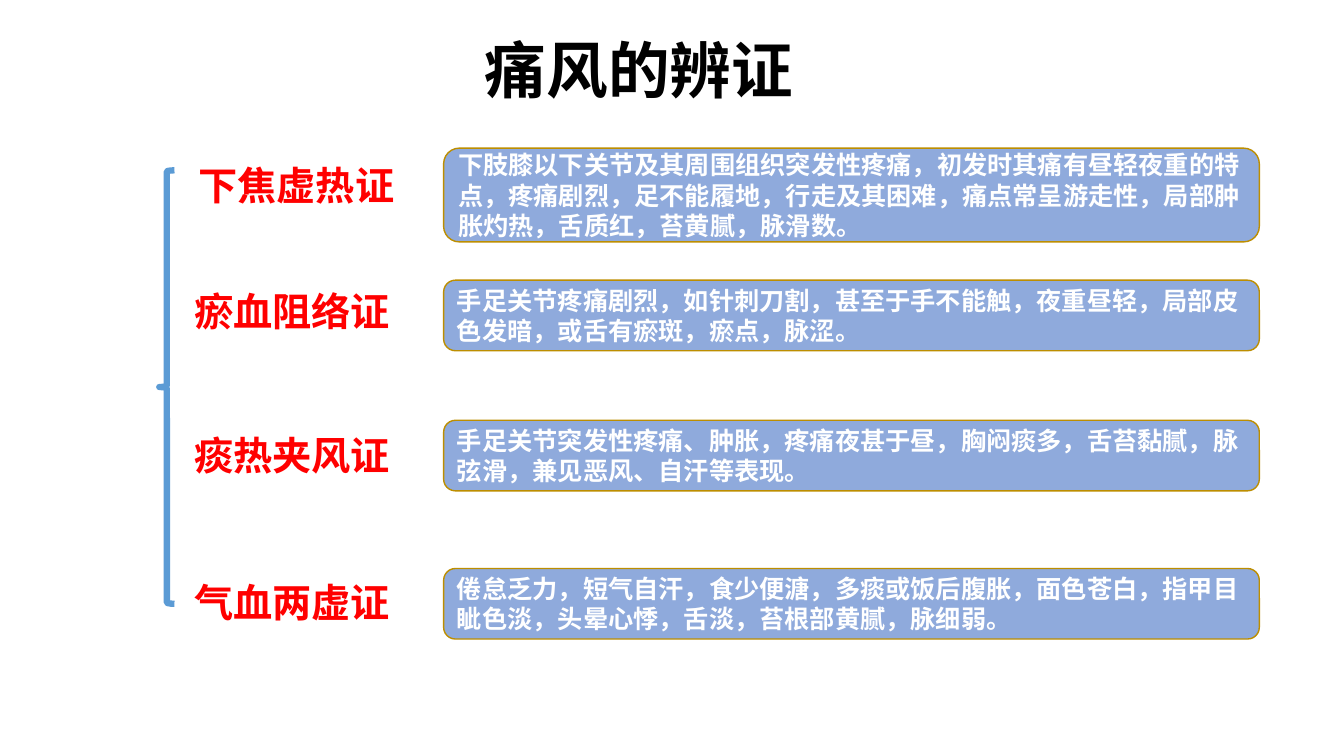
from lxml import etree
from pptx import Presentation
from pptx.dml.color import RGBColor
from pptx.enum.shapes import MSO_SHAPE
from pptx.enum.text import MSO_ANCHOR, PP_ALIGN
from pptx.oxml.ns import qn
from pptx.util import Inches, Pt

ROUND = MSO_SHAPE.ROUNDED_RECTANGLE
BRACE = MSO_SHAPE.LEFT_BRACE
MIDDLE = MSO_ANCHOR.MIDDLE
LEFT = PP_ALIGN.LEFT

BLACK = RGBColor(0x00, 0x00, 0x00)
WHITE = RGBColor(0xFF, 0xFF, 0xFF)
RED = RGBColor(0xFF, 0x00, 0x00)
BLUE = RGBColor(0x5B, 0x9B, 0xD5)
PALE = RGBColor(0x8F, 0xAA, 0xDC)
GOLD = RGBColor(0xBD, 0x8E, 0x00)

TITLE_FONT = "Noto Sans CJK JP"
LABEL_FONT = "Noto Sans CJK SC"
BODY_FONT = "Calibri"

ROWS = [
    ("下焦虚热证", 1.87, 1.55, 1.47, 0.93,
     "下肢膝以下关节及其周围组织突发性疼痛，初发时其痛有昼轻夜重的特点，疼痛剧烈，足不能履地，行走及其困难，痛点常呈游走性，局部肿胀灼热，舌质红，苔黄腻，脉滑数。"),
    ("瘀血阻络证", 1.83, 2.8, 2.78, 0.7,
     "手足关节疼痛剧烈，如针刺刀割，甚至于手不能触，夜重昼轻，局部皮色发暗，或舌有瘀斑，瘀点，脉涩。"),
    ("痰热夹风证", 1.83, 4.23, 4.17, 0.7,
     "手足关节突发性疼痛、肿胀，疼痛夜甚于昼，胸闷痰多，舌苔黏腻，脉弦滑，兼见恶风、自汗等表现。"),
    ("气血两虚证", 1.83, 5.69, 5.64, 0.7,
     "倦怠乏力，短气自汗，食少便溏，多痰或饭后腹胀，面色苍白，指甲目眦色淡，头晕心悸，舌淡，苔根部黄腻，脉细弱。"),
]


class Board:
    def __init__(self, slide):
        self.slide = slide

    def fill_text(self, frame, text, size, font, color):
        frame.word_wrap = True
        frame.text = text
        para = frame.paragraphs[0]
        para.alignment = LEFT
        run = para.runs[0]
        run.font.size = Pt(size)
        run.font.bold = True
        run.font.name = font
        run.font.color.rgb = color
        props = run._r.get_or_add_rPr()
        east = etree.SubElement(props, qn("a:ea"))
        east.set("typeface", font)
        return para

    def title(self, text):
        head = self.slide.shapes.title
        head.left, head.top = Inches(1.12), Inches(0)
        head.width, head.height = Inches(11.5), Inches(1.45)
        frame = head.text_frame
        frame.margin_left = Inches(3.69)
        frame.vertical_anchor = MIDDLE
        para = self.fill_text(frame, text, 44, TITLE_FONT, BLACK)
        para.line_spacing = 0.9

    def label(self, text, left, top):
        box = self.slide.shapes.add_textbox(
            Inches(left), Inches(top), Inches(2.3), Inches(0.57))
        self.fill_text(box.text_frame, text, 28, LABEL_FONT, RED)

    def shape(self, kind, left, top, width, height, color, weight):
        item = self.slide.shapes.add_shape(
            kind, Inches(left), Inches(top), Inches(width), Inches(height))
        item.shadow.inherit = False
        item.line.color.rgb = color
        item.line.width = Pt(weight)
        return item

    def card(self, text, top, height):
        item = self.shape(ROUND, 4.4, top, 8.09, height, GOLD, 1)
        item.fill.solid()
        item.fill.fore_color.rgb = PALE
        item.text_frame.vertical_anchor = MIDDLE
        self.fill_text(item.text_frame, text, 18, BODY_FONT, WHITE)

    def brace(self):
        item = self.shape(BRACE, 1.58, 1.69, 0.15, 4.3, BLUE, 4.5)
        item.fill.background()


def main():
    deck = Presentation()
    deck.slide_width = Inches(13.33)
    deck.slide_height = Inches(7.5)
    board = Board(deck.slides.add_slide(deck.slide_layouts[5]))
    board.title("痛风的辨证")
    for name, left, top, card_top, height, text in ROWS:
        board.label(name, left, top)
        board.card(text, card_top, height)
    board.brace()
    deck.save("out.pptx")


if __name__ == "__main__":
    main()
